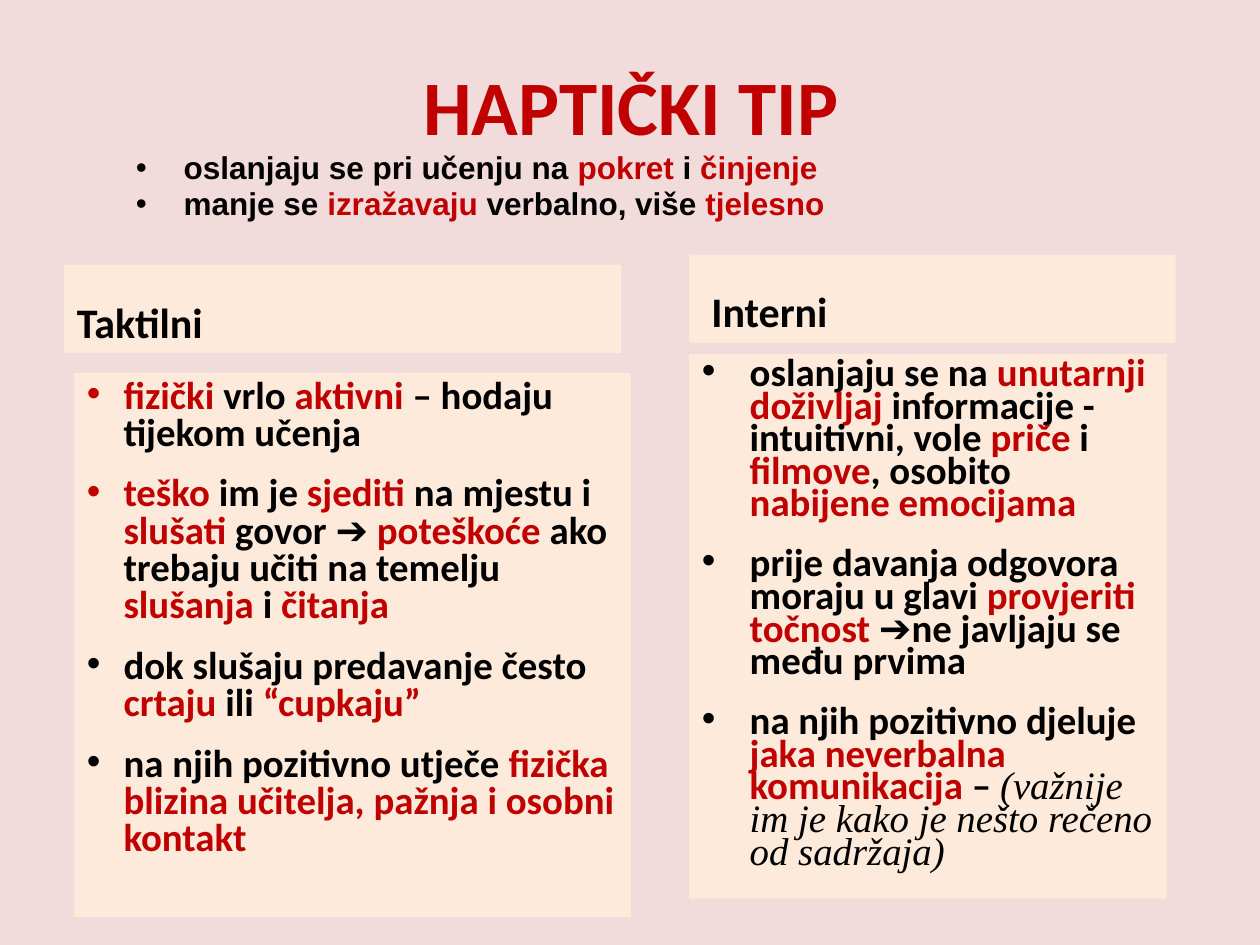
import pptx
import pptx.util
import pptx.dml.color
import pptx.enum.text
from lxml import etree

COLORS = {"background": "F2DCDB", "panel": "FDEADA", "accent": "C00000", "text": "000000"}

# Content: *accent*, _serif italic_
TITLE = "HAPTIČKI TIP"
INTRO = [
    "oslanjaju se pri učenju na *pokret* i *činjenje*",
    "manje se *izražavaju* verbalno, više *tjelesno*",
]
TACTILE = [
    "*fizički *vrlo *aktivni *– hodaju tijekom učenja",
    "*teško *im je *sjediti* na mjestu i *slušati *govor ➔ *poteškoće *ako trebaju učiti "
    "na temelju *slušanja* i *čitanja*",
    "dok slušaju predavanje često *crtaju *ili *“cupkaju”*",
    "na njih pozitivno utječe *fizička blizina učitelja, pažnja i osobni kontakt*",
]
INTERNAL = [
    "oslanjaju se na *unutarnji doživljaj* informacije - intuitivni, vole *priče* i *filmove*, "
    "osobito *nabijene emocijama*",
    "prije davanja odgovora moraju u glavi *provjeriti točnost *➔ne javljaju se među prvima",
    "na njih pozitivno djeluje *jaka neverbalna komunikacija *– "
    "_(važnije im je kako je nešto rečeno od sadržaja)_",
]

# Boxes in inches: left, top, width, height
TITLE_BOX = (0.51, 0.21, 9, 1.25)
INTRO_BOX = (0.98, 1.15, 8.52, 0.94)
COLUMNS = [
    {"heading": "Taktilni", "heading_box": (0.51, 2.1, 4.42, 0.7), "items": TACTILE,
     "list_box": (0.59, 2.96, 4.42, 4.32), "indent": 0.29, "line": 0.8, "before": 0.6},
    {"heading": " Interni", "heading_box": (5.47, 2.02, 3.86, 0.7), "items": INTERNAL,
     "list_box": (5.47, 2.81, 3.79, 4.32), "indent": 0.38, "line": 0.7, "before": 0.7},
]
LIST_SIZE = 22.2


def rgb(name):
    return pptx.dml.color.RGBColor.from_string(COLORS[name])


def place(shape, box, fill=None):
    shape.left, shape.top, shape.width, shape.height = map(pptx.util.Inches, box)
    shape.text_frame.word_wrap = True
    shape.text_frame.auto_size = pptx.enum.text.MSO_AUTO_SIZE.NONE
    if fill:
        shape.fill.solid()
        shape.fill.fore_color.rgb = rgb(fill)


def style(paragraph, size, font="Calibri", color="text"):
    paragraph.font.name = font
    paragraph.font.size = pptx.util.Pt(size)
    paragraph.font.bold = True
    paragraph.font.color.rgb = rgb(color)


def add_runs(paragraph, text):
    for i, part in enumerate(text.split("*")):
        for j, piece in enumerate(part.split("_")):
            if not piece:
                continue
            run = paragraph.add_run()
            run.text = piece
            run.font.color.rgb = rgb("accent" if i % 2 else "text")
            if j % 2:
                run.font.name = "Times New Roman"
                run.font.bold = False
                run.font.italic = True


def add_bullet(paragraph, indent):
    properties = paragraph._p.get_or_add_pPr()
    properties.set("marL", str(pptx.util.Inches(indent)))
    properties.set("indent", str(-pptx.util.Inches(indent)))
    for tag, name, value in (("buFont", "typeface", "Arial"), ("buChar", "char", "•")):
        bullet = etree.Element(pptx.oxml.ns.qn("a:" + tag))
        bullet.set(name, value)
        # Bullets come before the default run properties
        properties.find(pptx.oxml.ns.qn("a:defRPr")).addprevious(bullet)


def fill_list(frame, items, size, font, indent, line, before):
    for i, item in enumerate(items):
        paragraph = frame.add_paragraph() if i else frame.paragraphs[0]
        paragraph.line_spacing = line
        paragraph.space_before = pptx.util.Pt(round(size * before, 1))
        style(paragraph, size, font)
        add_bullet(paragraph, indent)
        add_runs(paragraph, item)
        for run in paragraph.runs:
            run.font.size = pptx.util.Pt(size)


def main():
    presentation = pptx.Presentation()
    presentation.slide_width = pptx.util.Inches(10)
    presentation.slide_height = pptx.util.Inches(7.5)
    slide = presentation.slides.add_slide(presentation.slide_layouts.get_by_name("Comparison"))
    slide.background.fill.solid()
    slide.background.fill.fore_color.rgb = rgb("background")

    # Title
    title, *bodies = slide.placeholders
    place(title, TITLE_BOX)
    title.text_frame.text = TITLE
    style(title.text_frame.paragraphs[0], 44, color="accent")

    # Two columns, each a heading over a list
    for column, heading, body in zip(COLUMNS, bodies[::2], bodies[1::2]):
        place(heading, column["heading_box"], "panel")
        heading.text_frame.text = column["heading"]
        style(heading.text_frame.paragraphs[0], 24)
        place(body, column["list_box"], "panel")
        fill_list(body.text_frame, column["items"], LIST_SIZE, "Calibri",
                  column["indent"], column["line"], column["before"])

    # Introduction under the title
    intro = slide.shapes.add_textbox(0, 0, 0, 0)
    place(intro, INTRO_BOX)
    fill_list(intro.text_frame, INTRO, 18, "Arial", 0.38, 0.95, 0)

    presentation.save("out.pptx")


if __name__ == "__main__":
    main()
